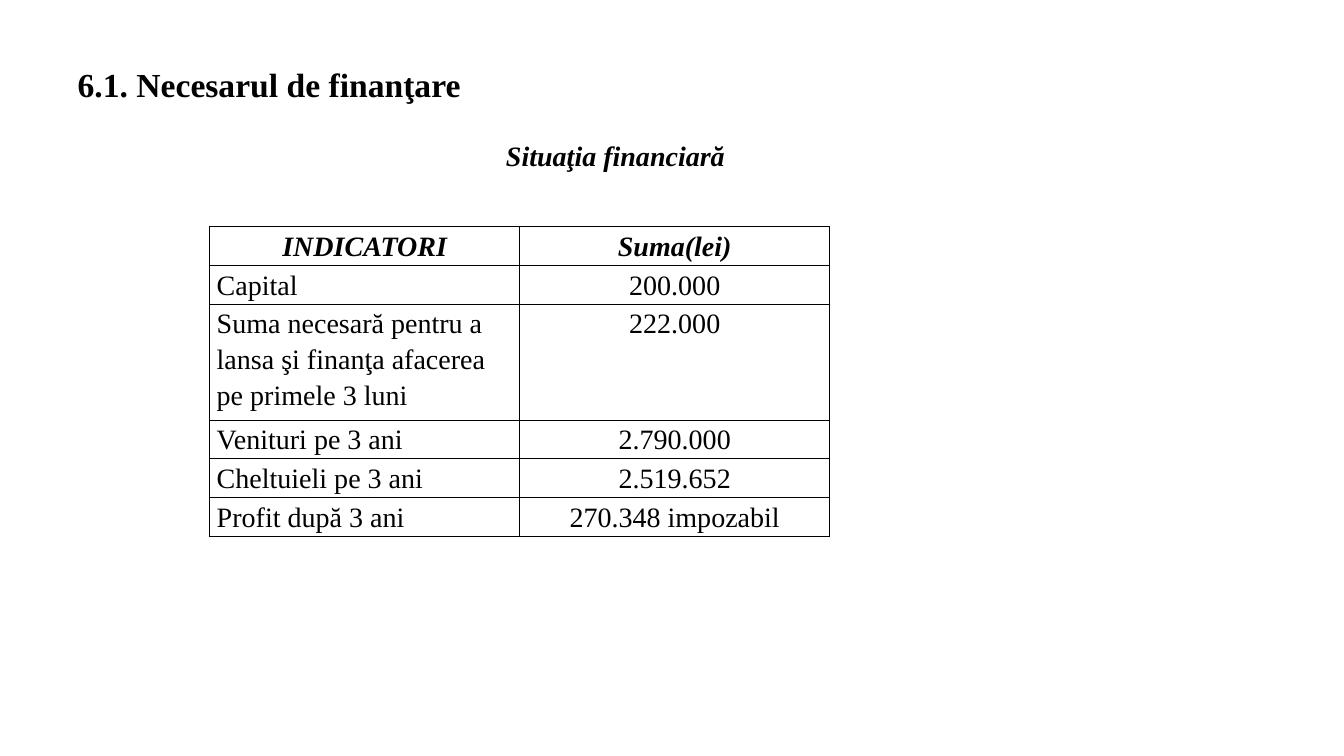
from dataclasses import dataclass

from lxml.etree import SubElement
from pptx import Presentation
from pptx.dml.color import RGBColor
from pptx.enum.text import MSO_ANCHOR as Anchor, PP_ALIGN as Align
from pptx.oxml.ns import qn
from pptx.util import Inches, Pt


@dataclass(frozen=True)
class Theme:
    font: str = "Times New Roman"
    ink: str = "000000"
    heading: int = 24
    body: int = 20
    border: int = 1


theme = Theme()


def style(para, size, bold=False, italic=False):
    font = para.font
    font.name = theme.font
    font.size = Pt(size)
    font.bold = bold
    font.italic = italic
    font.color.rgb = RGBColor.from_string(theme.ink)


def add_borders(cell):
    properties = cell._tc.get_or_add_tcPr()
    for side in ("lnL", "lnR", "lnT", "lnB"):
        line = SubElement(properties, qn(f"a:{side}"), w=str(Pt(theme.border)))
        fill = SubElement(line, qn("a:solidFill"))
        SubElement(fill, qn("a:srgbClr"), val=theme.ink)


deck = Presentation()
deck.slide_width = Inches(13.33)
deck.slide_height = Inches(7.5)
page = deck.slides.add_slide(deck.slide_layouts[5])

title = page.shapes.title
title.left, title.top = Inches(0.67), Inches(0.58)
title.width, title.height = Inches(4.04), Inches(0.5)
title.text_frame.text = "6.1. Necesarul de finanţare"
title.text_frame.word_wrap = False
title.text_frame.vertical_anchor = Anchor.TOP
heading = title.text_frame.paragraphs[0]
heading.alignment = Align.LEFT
style(heading, theme.heading, bold=True)

subtitle = page.shapes.add_textbox(Inches(2.42), Inches(1.33), Inches(4.91), Inches(0.44))
subtitle.text_frame.text = "Situaţia financiară"
subtitle.text_frame.word_wrap = False
caption = subtitle.text_frame.paragraphs[0]
indents = caption._p.get_or_add_pPr()
indents.set("marL", str(Inches(2)))
indents.set("indent", str(Inches(0.5)))
style(caption, theme.body, bold=True, italic=True)

finances = [
    ("INDICATORI", "Suma(lei)", 0.38),
    ("Capital", "200.000", 0.38),
    ("Suma necesară pentru a lansa şi finanţa afacerea pe primele 3 luni", "222.000", 1.15),
    ("Venituri pe 3 ani", "2.790.000", 0.38),
    ("Cheltuieli pe 3 ani", "2.519.652", 0.38),
    ("Profit după 3 ani", "270.348 impozabil", 0.38),
]
table = page.shapes.add_table(
    len(finances), 2, Inches(2.08), Inches(2.25), Inches(6.15), Inches(3.07)
).table

for row, (indicator, amount, height) in enumerate(finances):
    table.rows[row].height = Inches(height)
    header = row == 0
    for column, text in enumerate((indicator, amount)):
        cell = table.cell(row, column)
        cell.text = text
        cell.margin_left = cell.margin_right = Inches(0.07)
        cell.margin_top = cell.margin_bottom = 0
        add_borders(cell)
        cell.fill.background()
        para = cell.text_frame.paragraphs[0]
        para.alignment = Align.CENTER if header or column == 1 else Align.LEFT
        para.line_spacing = 1.15
        style(para, theme.body, bold=header, italic=header)

deck.save("out.pptx")
